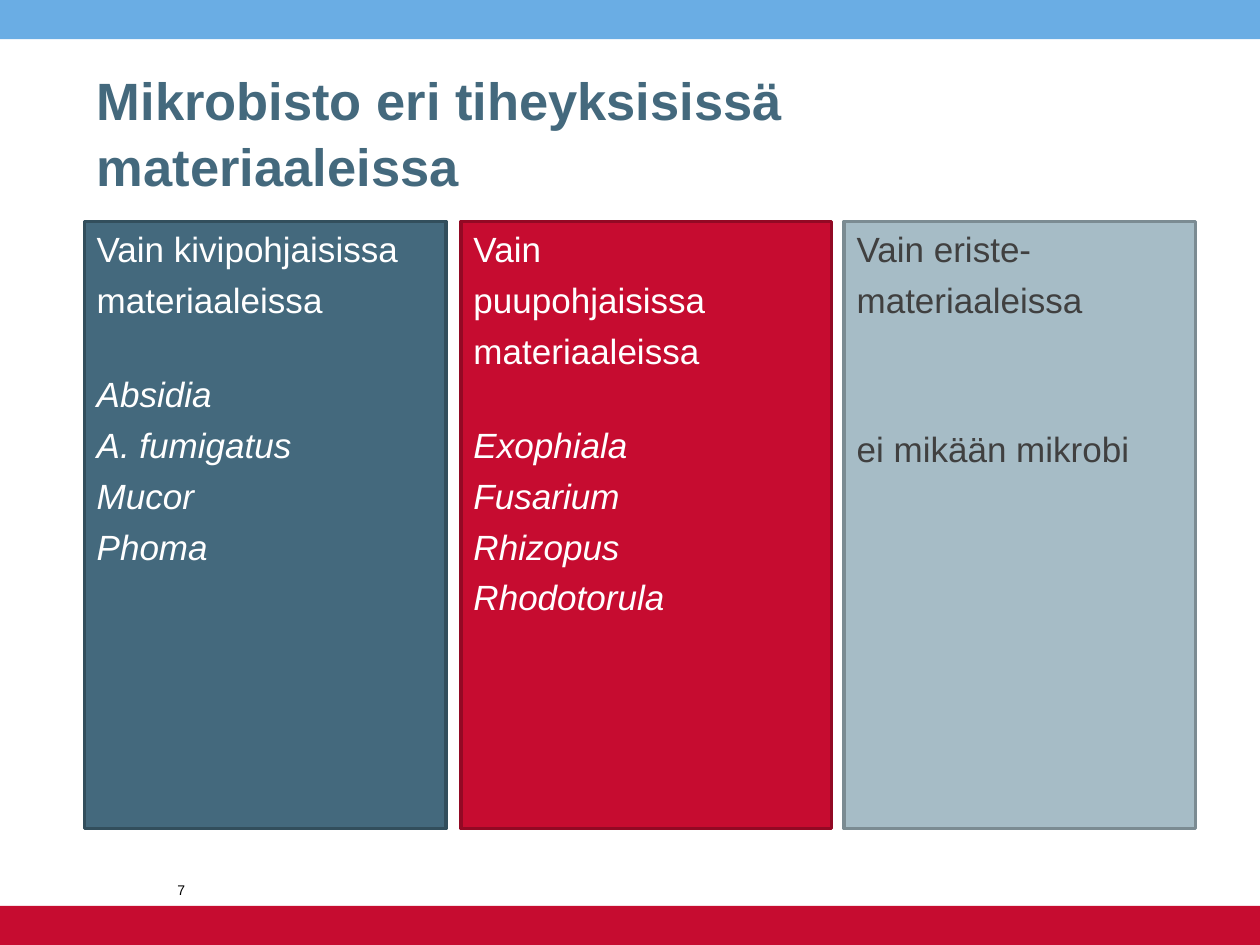
import pptx
import pptx.dml.color
import pptx.enum.shapes
import pptx.enum.text
import pptx.util

Pt = pptx.util.Pt
ANCHOR = pptx.enum.text.MSO_ANCHOR
LEFT = pptx.enum.text.PP_ALIGN.LEFT

# Content
TITLE = "Mikrobisto eri tiheyksisissä materiaaleissa"
PAGE_NUMBER = "7"
COLUMNS = [
    {"heading": ["Vain kivipohjaisissa", "materiaaleissa"],
     "items": ["Absidia", "A. fumigatus", "Mucor", "Phoma"],
     "left": 48.2, "width": 206.6, "gap": 30, "italic": True,
     "fill": "44697D", "line": "324E5C", "text": "FFFFFF"},
    {"heading": ["Vain", "puupohjaisissa", "materiaaleissa"],
     "items": ["Exophiala", "Fusarium", "Rhizopus", "Rhodotorula"],
     "left": 263.5, "width": 211.7, "gap": 30, "italic": True,
     "fill": "C60C30", "line": "920924", "text": "FFFFFF"},
    {"heading": ["Vain eriste-", "materiaaleissa"],
     "items": ["ei mikään mikrobi"],
     "left": 482.4, "width": 200.9, "gap": 61, "italic": False,
     "fill": "A6BCC6", "line": "7B8B92", "text": "404040"},
]

# Layout in points
SLIDE_WIDTH, SLIDE_HEIGHT = 720, 540
BAR_HEIGHT = 22.4
BARS = [(0, "6AADE4"), (SLIDE_HEIGHT - BAR_HEIGHT, "C60C30")]
COLUMN_TOP, COLUMN_HEIGHT = 126.5, 347
LINE_GAP = 5


def color(hex_value):
    return pptx.dml.color.RGBColor.from_string(hex_value)


def set_attributes(target, values):
    for name, value in values.items():
        setattr(target, name, value)


def format_font(paragraph, size, hex_value, **values):
    set_attributes(paragraph.font, {"name": "Arial", "size": Pt(size), **values})
    paragraph.font.color.rgb = color(hex_value)


def format_frame(frame, anchor):
    set_attributes(frame, {"word_wrap": True, "vertical_anchor": anchor,
                           "auto_size": pptx.enum.text.MSO_AUTO_SIZE.NONE})


def add_rectangle(slide, left, top, width, height, fill, line=None):
    shape = slide.shapes.add_shape(
        pptx.enum.shapes.MSO_SHAPE.RECTANGLE,
        Pt(left), Pt(top), Pt(width), Pt(height))
    shape.shadow.inherit = False
    shape.fill.solid()
    shape.fill.fore_color.rgb = color(fill)
    if line:
        shape.line.color.rgb = color(line)
        shape.line.width = Pt(2)
    else:
        shape.line.fill.background()
    return shape


def add_column(slide, column):
    shape = add_rectangle(slide, column["left"], COLUMN_TOP, column["width"],
                          COLUMN_HEIGHT, column["fill"], column["line"])
    frame = shape.text_frame
    format_frame(frame, ANCHOR.TOP)
    heading_count = len(column["heading"])
    for index, text in enumerate(column["heading"] + column["items"]):
        paragraph = frame.add_paragraph() if index else frame.paragraphs[0]
        set_attributes(paragraph, {"text": text, "alignment": LEFT})
        if index:
            gap = column["gap"] if index == heading_count else LINE_GAP
            paragraph.space_before = Pt(gap)
        format_font(paragraph, 20, column["text"],
                    italic=column["italic"] and index >= heading_count)


def main():
    presentation = pptx.Presentation()
    set_attributes(presentation, {"slide_width": Pt(SLIDE_WIDTH),
                                  "slide_height": Pt(SLIDE_HEIGHT)})
    slide = presentation.slides.add_slide(presentation.slide_layouts[5])

    # Top and bottom bars
    for top, fill in BARS:
        add_rectangle(slide, 0, top, SLIDE_WIDTH, BAR_HEIGHT, fill)

    # Title
    title = slide.shapes.title
    set_attributes(title, {"left": Pt(48.2), "top": Pt(31),
                           "width": Pt(589.7), "height": Pt(85)})
    format_frame(title.text_frame, ANCHOR.BOTTOM)
    paragraph = title.text_frame.paragraphs[0]
    set_attributes(paragraph, {"text": TITLE, "alignment": LEFT,
                               "line_spacing": 1.04})
    format_font(paragraph, 30, "44697D", bold=True)

    # Material columns
    for column in COLUMNS:
        add_column(slide, column)

    # Page number
    box = slide.shapes.add_textbox(Pt(94.3), Pt(488.2), Pt(141.8), Pt(28.8))
    format_frame(box.text_frame, ANCHOR.BOTTOM)
    paragraph = box.text_frame.paragraphs[0]
    paragraph.text = PAGE_NUMBER
    format_font(paragraph, 8, "000000")

    presentation.save("out.pptx")


if __name__ == "__main__":
    main()
